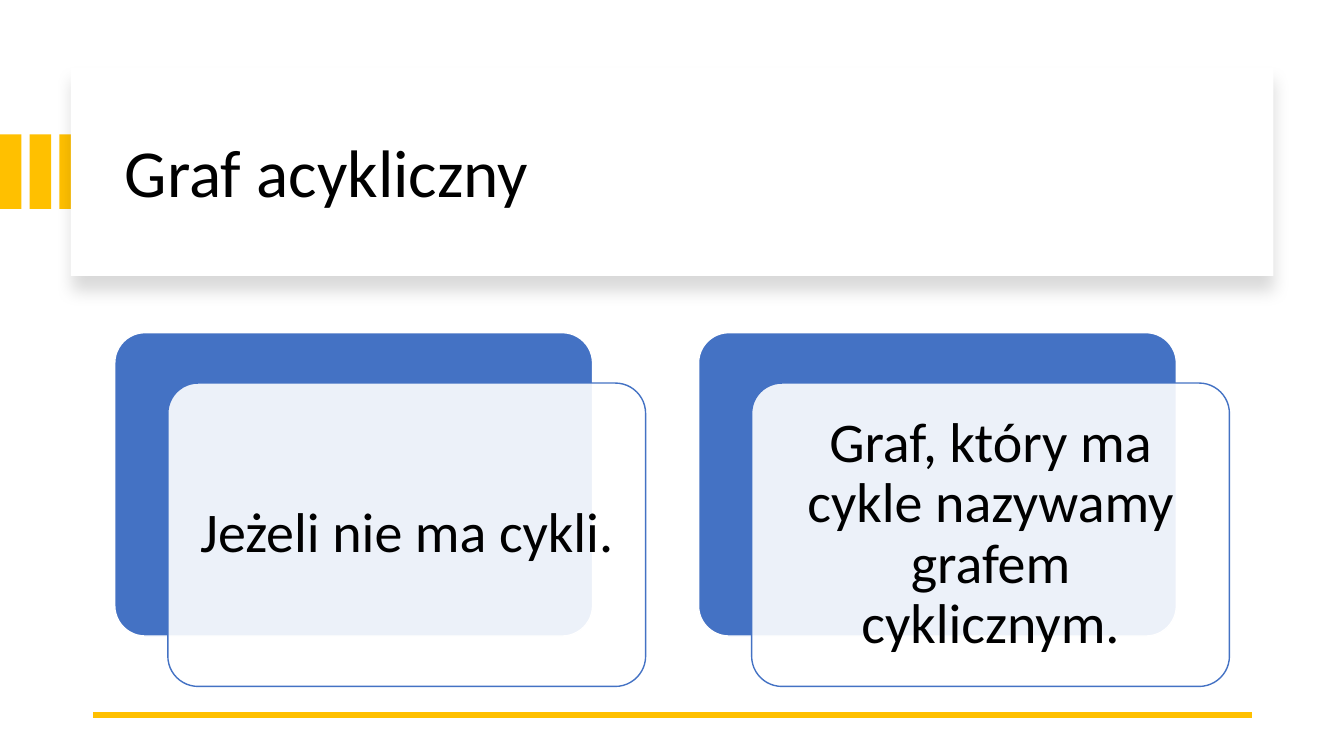
from lxml.etree import SubElement
from pptx import Presentation
from pptx.dml.color import RGBColor
from pptx.enum.shapes import MSO_CONNECTOR, MSO_SHAPE
from pptx.enum.text import MSO_ANCHOR, PP_ALIGN
from pptx.oxml.ns import qn
from pptx.util import Pt

GOLD = RGBColor(0xFF, 0xC0, 0x00)
BLUE = RGBColor(0x44, 0x72, 0xC4)
WHITE = RGBColor(0xFF, 0xFF, 0xFF)
BLACK = RGBColor(0x00, 0x00, 0x00)

CARD_WIDTH, CARD_HEIGHT = 341.3, 216.7
CARD_TEXTS = [
    "Jeżeli nie ma cykli.",
    "Graf, który ma cykle nazywamy grafem cyklicznym.",
]


def add_box(slide, kind, left, top, width, height, fill, line=None):
    box = slide.shapes.add_shape(kind, Pt(left), Pt(top), Pt(width), Pt(height))
    box.shadow.inherit = False
    box.fill.solid()
    box.fill.fore_color.rgb = fill
    if line is None:
        box.line.fill.background()
    else:
        box.line.color.rgb = line
        box.line.width = Pt(1)
    return box


def add_label(slide, left, top, width, height, text, size, align, inset, space_after=0):
    label = slide.shapes.add_textbox(Pt(left), Pt(top), Pt(width), Pt(height))
    frame = label.text_frame
    frame.word_wrap = True
    frame.vertical_anchor = MSO_ANCHOR.MIDDLE
    frame.margin_left = frame.margin_right = Pt(inset)
    frame.margin_top = frame.margin_bottom = Pt(inset)
    paragraph = frame.paragraphs[0]
    paragraph.alignment = align
    paragraph.line_spacing = 0.9
    paragraph.space_after = Pt(space_after)
    run = paragraph.add_run()
    run.text = text
    run.font.name = "Calibri"
    run.font.size = Pt(size)
    run.font.color.rgb = BLACK


def add_drop_shadow(box):
    effects = box._element.spPr.find(qn("a:effectLst"))
    shadow = SubElement(effects, qn("a:outerShdw"), blurRad=str(Pt(11)),
                        dist=str(Pt(10)), dir="5400000", algn="t", rotWithShape="0")
    color = SubElement(shadow, qn("a:srgbClr"), val=str(BLACK))
    SubElement(color, qn("a:alpha"), val="15000")


def add_rule(slide, left, right, y):
    rule = slide.shapes.add_connector(
        MSO_CONNECTOR.STRAIGHT, Pt(right), Pt(y), Pt(left), Pt(y))
    rule.line.color.rgb = GOLD
    rule.line.width = Pt(4.5)
    SubElement(rule._element.spPr, qn("a:effectLst"))


def add_card(slide, left, top, text):
    # Blue back plate and translucent front plate
    back = add_box(slide, MSO_SHAPE.ROUNDED_RECTANGLE, left, top,
                   CARD_WIDTH, CARD_HEIGHT, BLUE, WHITE)
    front_left, front_top = left + 37.9, top + 36
    front = add_box(slide, MSO_SHAPE.ROUNDED_RECTANGLE, front_left, front_top,
                    CARD_WIDTH, CARD_HEIGHT, WHITE, BLUE)
    for plate in (back, front):
        plate.adjustments[0] = 0.1
    fill_color = front._element.spPr.find(qn("a:solidFill"))[0]
    SubElement(fill_color, qn("a:alpha"), val="90000")

    # Text inside the rounded corners
    inner = 6.4
    add_label(slide, front_left + inner, front_top + inner,
              CARD_WIDTH - 2 * inner, CARD_HEIGHT - 2 * inner,
              text, 40, PP_ALIGN.CENTER, 12, space_after=14)


def main():
    presentation = Presentation()
    presentation.slide_width, presentation.slide_height = Pt(960), Pt(540)
    slide = presentation.slides.add_slide(presentation.slide_layouts[6])

    # Gold stripes at the left edge
    for index in range(3):
        add_box(slide, MSO_SHAPE.RECTANGLE, index * 21.25, 96, 15.3, 53.3, GOLD)

    # Title panel
    panel = add_box(slide, MSO_SHAPE.RECTANGLE, 50.6, 48.2, 859, 149, WHITE)
    add_drop_shadow(panel)
    add_label(slide, 82, 64, 801.5, 122.4, "Graf acykliczny", 48, PP_ALIGN.LEFT, 7.2)

    # Gold rule at the bottom
    add_rule(slide, 66.2, 894.2, 510.5)

    # Definition cards
    for index, text in enumerate(CARD_TEXTS):
        add_card(slide, 82 + index * 417, 237.6, text)

    presentation.save("out.pptx")


if __name__ == "__main__":
    main()
